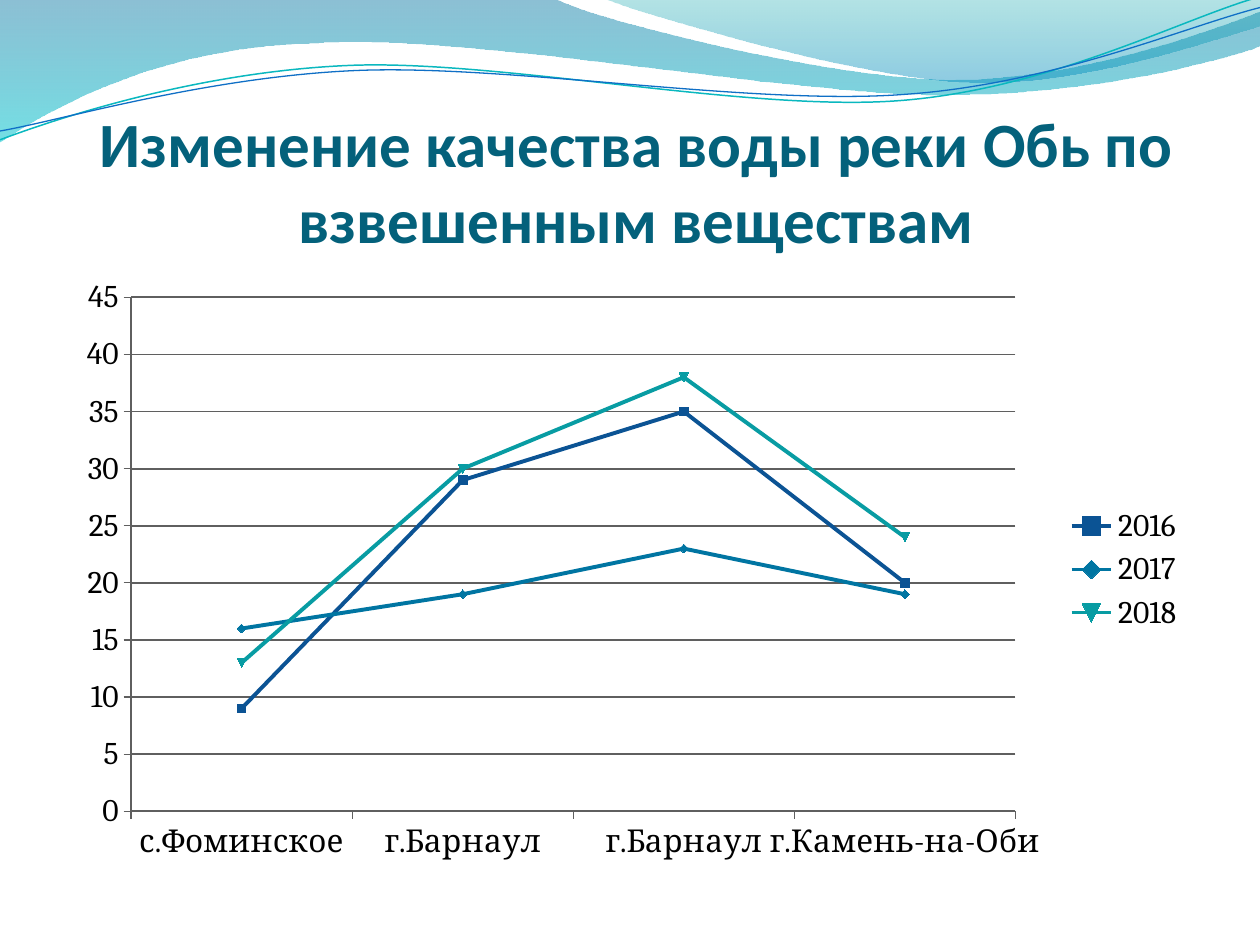
from dataclasses import dataclass

from lxml.etree import SubElement
from pptx import Presentation
from pptx.chart.data import CategoryChartData
from pptx.dml.color import RGBColor
from pptx.enum.chart import XL_CHART_TYPE, XL_LEGEND_POSITION, XL_TICK_MARK
from pptx.enum.text import MSO_ANCHOR, PP_ALIGN
from pptx.oxml.ns import qn
from pptx.util import Inches, Pt


@dataclass(frozen=True)
class Theme:
    title_font: str = "Calibri"
    chart_font: str = "Cambria"
    title_size: float = 36
    chart_size: float = 18
    series_width: float = 2.25
    axis_width: float = 0.75
    grid_width: float = 1
    title: str = "04617B"
    text: str = "000000"
    axis: str = "5F5F5F"
    series: tuple = ("0B5394", "0075A2", "089CA3")
    # Gradient stops, top to bottom: colour and opacity in percent
    wide_wave: tuple = (("0074A1", 45), ("00C6CF", 55))
    right_wave: tuple = (("00A1A9", 30), ("008BBF", 45))


@dataclass(frozen=True)
class Box:
    """A region counted in columns and rows of a grid of one-inch cells."""
    column: float
    row: float
    columns: float
    rows: float

    def point(self, x, y):
        return Inches(self.column + x), Inches(self.row + y)

    def frame(self):
        return tuple(map(Inches, (self.column, self.row, self.columns, self.rows)))


THEME = Theme()
SLIDE = Box(0, 0, 10, 7.5)
HEADER = Box(0, 0, 10, 1.15)
TITLE = Box(0.55, 0.7, 9, 1.33)
CHART = Box(0.5, 2.12, 9, 4.8)

# Each outline is a start point followed by lines (2 numbers) and curves (6 numbers)
WIDE_WAVE = [
    (0, 0), (4.4, -0.01), (4.76, 0.17, 6.64, 0.63, 7.58, 0.63),
    (8.53, 0.63, 9.58, 0.26, 10, 0.09), (10.01, 0.36),
    (9.83, 0.44, 8.7, 0.76, 7.46, 0.75), (6.22, 0.75, 3.82, 0.28, 2.57, 0.34),
    (1.29, 0.36, 0.46, 0.83, -0.01, 1.13), (0, 0),
]
RIGHT_WAVE = [
    (4.79, -0.01), (5.09, 0.11, 6.82, 0.62, 7.69, 0.65),
    (8.56, 0.69, 9.61, 0.32, 10, 0.21), (10, 0), (4.79, -0.01),
]
STRANDS = [
    ("0AB8BF", 0.85, [(0, 1.11), (0.48, 0.93, 1.58, 0.57, 2.77, 0.52),
                      (3.95, 0.47, 5.93, 0.89, 7.13, 0.8),
                      (8.33, 0.71, 9.38, 0.15, 9.98, -0.02)]),
    ("0F6FC6", 0.75, [(0, 1.04), (0.47, 0.96, 1.64, 0.61, 2.83, 0.56),
                      (4.03, 0.51, 5.97, 0.84, 7.17, 0.75),
                      (8.36, 0.67, 9.41, 0.21, 10, 0.06)]),
]

CATEGORIES = ["с.Фоминское", "г.Барнаул", "г.Барнаул", "г.Камень-на-Оби"]
SERIES = {"2016": (9, 29, 35, 20), "2017": (16, 19, 23, 19), "2018": (13, 30, 38, 24)}
PLOT_SHARES = {"x": 0.06, "y": 0.05, "w": 0.78, "h": 0.85}


def set_values(target, values):
    for name, value in values.items():
        setattr(target, name, value)


def set_font(font, name, size, color, bold=False):
    set_values(font, {"name": name, "size": Pt(size), "bold": bold})
    font.color.rgb = RGBColor.from_string(color)


def set_line(line, color, width):
    line.color.rgb = RGBColor.from_string(color)
    line.width = Pt(width)


def bend_segments(shape, segments):
    """Merge each run of three lines that stands for a curve into one curve."""
    lines = iter(list(shape._element.iter(qn("a:lnTo"))))
    for segment in segments:
        first = next(lines)
        if len(segment) == 6:
            first.tag = qn("a:cubicBezTo")
            for line in (next(lines), next(lines)):
                first.append(line[0])
                line.getparent().remove(line)


def add_outline(slide, box, outline, close):
    start, *segments = outline
    points = [box.point(*segment[i:i + 2])
              for segment in segments for i in range(0, len(segment), 2)]
    builder = slide.shapes.build_freeform(*box.point(*start))
    builder.add_line_segments(points, close=close)
    shape = builder.convert_to_shape()
    bend_segments(shape, segments)
    shape.shadow.inherit = False
    return shape


def add_wave(slide, box, outline, stops):
    shape = add_outline(slide, box, outline, close=True)
    shape.line.fill.background()
    shape.fill.gradient()
    shape.fill.gradient_angle = 270
    for position, (stop, (color, _)) in enumerate(zip(shape.fill.gradient_stops, stops)):
        stop.position = position
        stop.color.rgb = RGBColor.from_string(color)
    gradient = shape._element.spPr.find(qn("a:gradFill"))
    for color, (_, opacity) in zip(gradient.iter(qn("a:srgbClr")), stops):
        SubElement(color, qn("a:alpha"), val=str(opacity * 1000))


def add_header(slide, box):
    add_wave(slide, box, WIDE_WAVE, THEME.wide_wave)
    add_wave(slide, box, RIGHT_WAVE, THEME.right_wave)
    for color, width, outline in STRANDS:
        strand = add_outline(slide, box, outline, close=False)
        strand.fill.background()
        set_line(strand.line, color, width)


def add_title(slide, box):
    frame = slide.shapes.add_textbox(*box.frame()).text_frame
    set_values(frame, {"word_wrap": True, "vertical_anchor": MSO_ANCHOR.BOTTOM,
                       "margin_left": 0, "margin_right": 0,
                       "margin_top": Inches(0.05), "margin_bottom": 0})
    paragraph = frame.paragraphs[0]
    paragraph.alignment = PP_ALIGN.CENTER
    run = paragraph.add_run()
    run.text = "Изменение качества воды реки Обь по взвешенным веществам"
    set_font(run.font, THEME.title_font, THEME.title_size, THEME.title, bold=True)


def place_plot(chart, shares):
    """Fix the inner plot area at shares of the chart's size."""
    plot_area = chart._chartSpace.chart.plotArea
    layout = plot_area.find(qn("c:layout"))
    if layout is None:
        layout = SubElement(plot_area, qn("c:layout"))
        plot_area.insert(0, layout)
    manual = SubElement(layout, qn("c:manualLayout"))
    modes = {"layoutTarget": "inner", "xMode": "edge", "yMode": "edge"}
    for name, value in {**modes, **shares}.items():
        SubElement(manual, qn(f"c:{name}"), val=str(value))


def add_line_chart(slide, box):
    data = CategoryChartData()
    data.categories = CATEGORIES
    for name, values in SERIES.items():
        data.add_series(name, values)
    chart = slide.shapes.add_chart(XL_CHART_TYPE.LINE_MARKERS, *box.frame(), data).chart
    set_values(chart, {"has_title": False, "has_legend": True})
    set_values(chart.legend, {"position": XL_LEGEND_POSITION.RIGHT,
                              "include_in_layout": False})
    set_font(chart.font, THEME.chart_font, THEME.chart_size, THEME.text)
    place_plot(chart, PLOT_SHARES)

    for axis in (chart.category_axis, chart.value_axis):
        axis.major_tick_mark = XL_TICK_MARK.OUTSIDE
        set_line(axis.format.line, THEME.axis, THEME.axis_width)
    set_values(chart.value_axis, {"minimum_scale": 0, "maximum_scale": 45,
                                  "major_unit": 5, "has_major_gridlines": True})
    set_line(chart.value_axis.major_gridlines.format.line, THEME.axis, THEME.grid_width)

    chart.plots[0].vary_by_categories = False
    for series, color in zip(chart.plots[0].series, THEME.series):
        series.smooth = False
        set_line(series.format.line, color, THEME.series_width)


def main():
    presentation = Presentation()
    set_values(presentation, {"slide_width": Inches(SLIDE.columns),
                              "slide_height": Inches(SLIDE.rows)})
    slide = presentation.slides.add_slide(presentation.slide_layouts[6])
    add_header(slide, HEADER)
    add_title(slide, TITLE)
    add_line_chart(slide, CHART)
    presentation.save("out.pptx")


if __name__ == "__main__":
    main()
